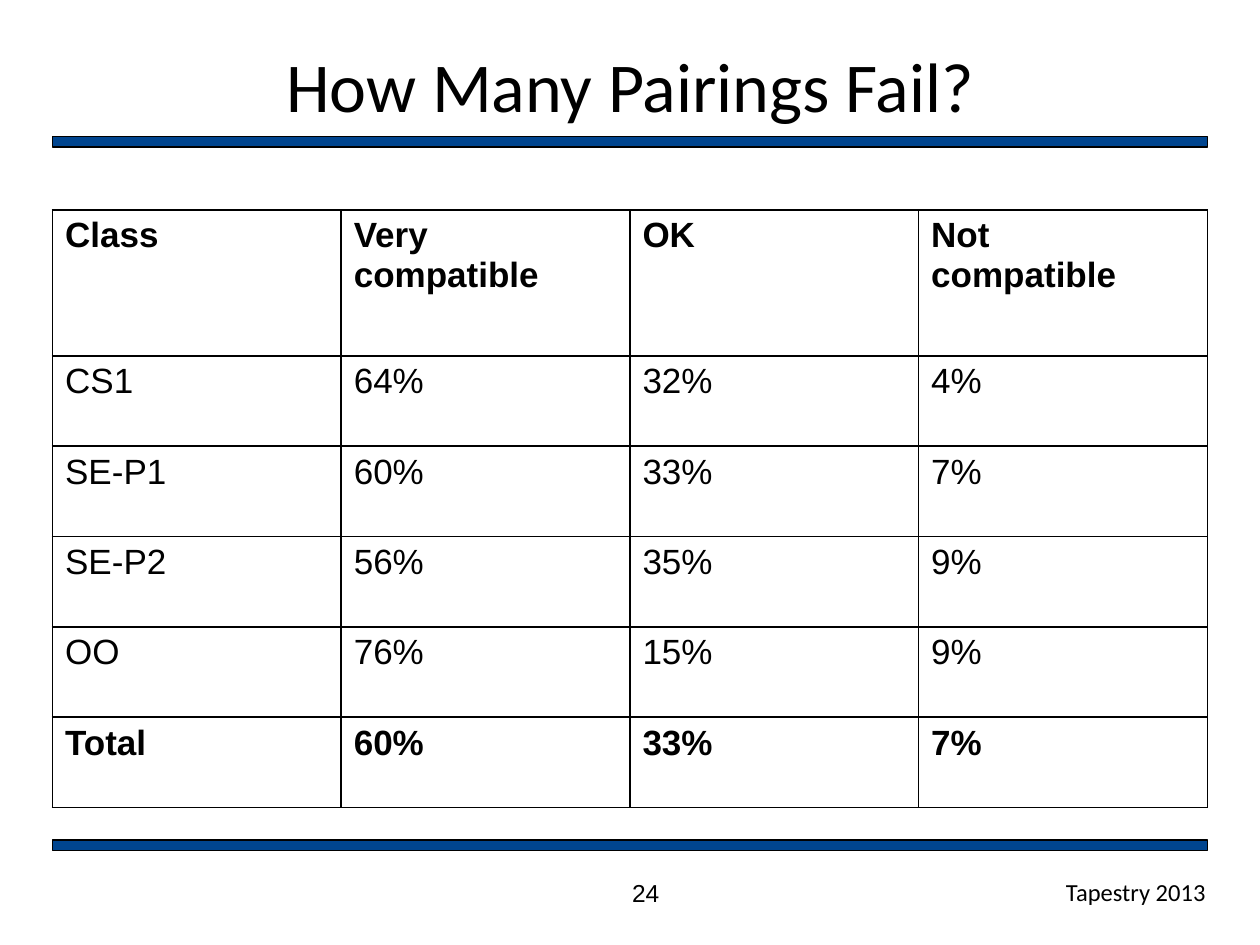
"""Build the pairing compatibility slide."""
from dataclasses import dataclass

from lxml.etree import SubElement
from pptx import Presentation
from pptx.dml.color import RGBColor
from pptx.enum.shapes import MSO_SHAPE
from pptx.enum.text import MSO_ANCHOR, PP_ALIGN
from pptx.oxml.ns import qn
from pptx.slide import Slide
from pptx.table import _Cell as Cell
from pptx.util import Emu, Pt

PX = 7620
LEFT, WIDTH = 50, 1100
BLACK, BLUE = "000000", "00458F"
BAR_TOPS = (130, 800)
TABLE_TOP, HEADER_H, ROW_H = 200, 139, 86
ROWS = (
    ("Class", "Very\ncompatible", "OK", "Not\ncompatible"),
    ("CS1", "64%", "32%", "4%"),
    ("SE-P1", "60%", "33%", "7%"),
    ("SE-P2", "56%", "35%", "9%"),
    ("OO", "76%", "15%", "9%"),
    ("Total", "60%", "33%", "7%"),
)


@dataclass(frozen=True)
class Label:
    text: str
    x: int
    y: int
    w: int
    h: int
    size: int
    font: str
    align: PP_ALIGN
    anchor: MSO_ANCHOR = MSO_ANCHOR.TOP


LABELS = (
    Label("How Many Pairings Fail?", LEFT, 40, WIDTH, 80, 40, "Calibri",
          PP_ALIGN.CENTER, MSO_ANCHOR.MIDDLE),
    Label("24", 410, 830, 410, 40, 14, "Arial", PP_ALIGN.CENTER),
    Label("Tapestry 2013", 820, 829, 340, 41, 14, "Calibri", PP_ALIGN.RIGHT),
)


def px(n: int) -> Emu:
    return Emu(n * PX)


def rgb(value: str) -> RGBColor:
    return RGBColor.from_string(value)


def write(tf, text: str, size: int, font: str, align: PP_ALIGN, bold: bool = False) -> None:
    tf.text = text
    for p in tf.paragraphs:
        p.alignment = align
        p.font.size = Pt(size)
        p.font.name = font
        p.font.bold = bold
        p.font.color.rgb = rgb(BLACK)


def add_bar(s: Slide, top: int) -> None:
    sp = s.shapes.add_shape(MSO_SHAPE.RECTANGLE, px(LEFT), px(top), px(WIDTH), px(10))
    sp.shadow.inherit = False
    sp.fill.solid()
    sp.fill.fore_color.rgb = rgb(BLUE)
    sp.line.color.rgb = rgb(BLACK)
    sp.line.width = Pt(0.75)


def add_label(s: Slide, label: Label) -> None:
    sp = s.shapes.add_textbox(px(label.x), px(label.y), px(label.w), px(label.h))
    tf = sp.text_frame
    tf.word_wrap = True
    tf.vertical_anchor = label.anchor
    write(tf, label.text, label.size, label.font, label.align)


def add_borders(cell: Cell) -> None:
    tc_pr = cell._tc.get_or_add_tcPr()
    for side in ("a:lnL", "a:lnR", "a:lnT", "a:lnB"):
        ln = SubElement(tc_pr, qn(side), w=str(Pt(1)))
        fill = SubElement(ln, qn("a:solidFill"))
        SubElement(fill, qn("a:srgbClr"), val=BLACK)


def add_results(s: Slide) -> None:
    n_rows, n_cols = len(ROWS), len(ROWS[0])
    height = HEADER_H + (n_rows - 1) * ROW_H
    frame = s.shapes.add_table(n_rows, n_cols, px(LEFT), px(TABLE_TOP), px(WIDTH), px(height))
    table = frame.table
    table.first_row = table.horz_banding = False
    for col in table.columns:
        col.width = px(WIDTH // n_cols)
    for i, values in enumerate(ROWS):
        table.rows[i].height = px(ROW_H if i else HEADER_H)
        for j, value in enumerate(values):
            cell = table.cell(i, j)
            add_borders(cell)
            cell.fill.background()
            write(cell.text_frame, value, 20, "Arial", PP_ALIGN.JUSTIFY,
                  bold=i in (0, n_rows - 1))


def main() -> None:
    prs = Presentation()
    prs.slide_width, prs.slide_height = px(1200), px(900)
    s = prs.slides.add_slide(prs.slide_layouts[6])
    for top in BAR_TOPS:
        add_bar(s, top)
    for label in LABELS:
        add_label(s, label)
    add_results(s)
    prs.save("out.pptx")


if __name__ == "__main__":
    main()
